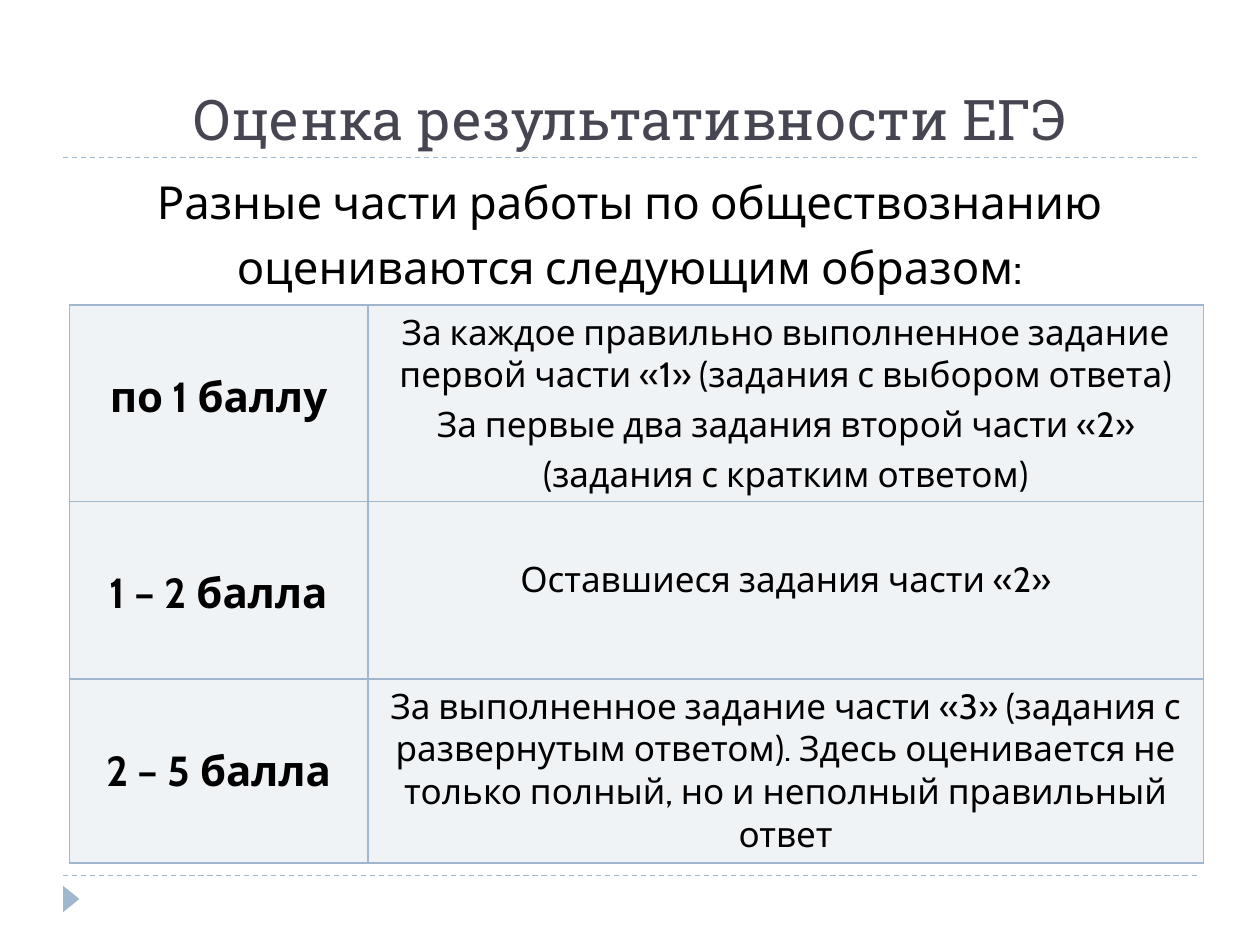
from pptx import Presentation
from pptx.dml.color import RGBColor
from pptx.enum.dml import MSO_LINE
from pptx.enum.shapes import MSO_CONNECTOR, MSO_SHAPE
from pptx.enum.text import MSO_ANCHOR, PP_ALIGN
from pptx.util import Inches, Pt
from lxml import etree

DASH = MSO_LINE.DASH
LINE = MSO_CONNECTOR.STRAIGHT
TRI = MSO_SHAPE.ISOSCELES_TRIANGLE
TOP, LOW = MSO_ANCHOR.TOP, MSO_ANCHOR.BOTTOM
MID = PP_ALIGN.CENTER
NS = "http://schemas.openxmlformats.org/drawingml/2006/main"
BLUE, PALE, INK, BLACK = "9FB8CD", "F0F3F6", "464653", "000000"

deck = Presentation()
deck.slide_width, deck.slide_height = Inches(10), Inches(7.5)
slide = deck.slides.add_slide(deck.slide_layouts[6])
shapes = slide.shapes

# Grid of 100 columns by 75 rows
COL, ROW = deck.slide_width / 100, deck.slide_height / 75


def grid(x, y, w, h):
    return [round(n * unit) for n, unit in zip((x, y, w, h), (COL, ROW) * 2)]


def write(frame, lines, gap, color, **font):
    frame.word_wrap = True
    for i, line in enumerate(lines):
        para = frame.paragraphs[0] if i == 0 else frame.add_paragraph()
        para.alignment = MID
        if i:
            para.space_before = Pt(gap)
        run = para.add_run()
        run.text = line
        for key, value in font.items():
            setattr(run.font, key, value)
        run.font.color.rgb = RGBColor.from_string(color)


# Dashed rules
for y in (69.5, 12.5):
    x1, y1, x2, y2 = grid(5, y, 95, y)
    rule = shapes.add_connector(LINE, x1, y1, x2, y2)
    rule.line.color.rgb = RGBColor.from_string(BLUE)
    rule.line.width = Pt(0.75)
    rule.line.dash_style = DASH
    etree.SubElement(rule._element.spPr, f"{{{NS}}}effectLst")

# Corner marker
mark = shapes.add_shape(TRI, *grid(4.6, 70.7, 2.1, 1.3))
mark.rotation = 90
mark.shadow.inherit = False
mark.fill.solid()
mark.fill.fore_color.rgb = RGBColor.from_string(BLUE)
mark.line.fill.background()

# Title and lead text
title = shapes.add_textbox(*grid(5, 1.7, 90, 10.8)).text_frame
title.vertical_anchor = LOW
write(title, ["Оценка результативности ЕГЭ"], 0, INK,
      name="Roboto Slab", size=Pt(32))
lead = shapes.add_textbox(*grid(5, 13.3, 90, 11)).text_frame
write(lead, ["Разные части работы по обществознанию",
             "оцениваются следующим образом:"], 6, BLACK,
      name="Cabin", size=Pt(26))

# Score table: label, detail lines, top margin of the detail in rows
scores = [
    ("по 1 баллу",
     ["За каждое правильно выполненное задание первой части «1» "
      "(задания с выбором ответа)",
      "За первые два задания второй части «2»",
      "(задания с кратким ответом)"], 0.5),
    ("1 – 2 балла", ["Оставшиеся задания части «2»"], 4.5),
    ("2 – 5 балла",
     ["За выполненное задание части «3» (задания с развернутым ответом). "
      "Здесь оценивается не только полный, но и неполный правильный ответ"],
     0.5),
]
table = shapes.add_table(3, 2, *grid(5.5, 24.2, 90, 44.3)).table
table.first_row = table.horz_banding = False
for col, width in zip(table.columns, (23.7, 66.3)):
    col.width = round(width * COL)
for row, height in zip(table.rows, (15.6, 14.1, 14.6)):
    row.height = round(height * ROW)

for r, (label, detail, top) in enumerate(scores):
    parts = (([label], 24, True, 5.3), (detail, 20, False, top))
    for c, (lines, size, bold, inset) in enumerate(parts):
        cell = table.cell(r, c)
        cell.vertical_anchor = TOP
        cell.margin_top = round(inset * ROW)
        write(cell.text_frame, lines, 4, BLACK,
              name="Cabin", size=Pt(size), bold=bold)
        # Borders come before the fill in the cell properties
        props = cell._tc.get_or_add_tcPr()
        for side in ("lnL", "lnR", "lnT", "lnB"):
            edge = etree.SubElement(props, f"{{{NS}}}{side}", w=str(Pt(1)))
            paint = etree.SubElement(edge, f"{{{NS}}}solidFill")
            etree.SubElement(paint, f"{{{NS}}}srgbClr", val=BLUE)
        cell.fill.solid()
        cell.fill.fore_color.rgb = RGBColor.from_string(PALE)

deck.save("out.pptx")
